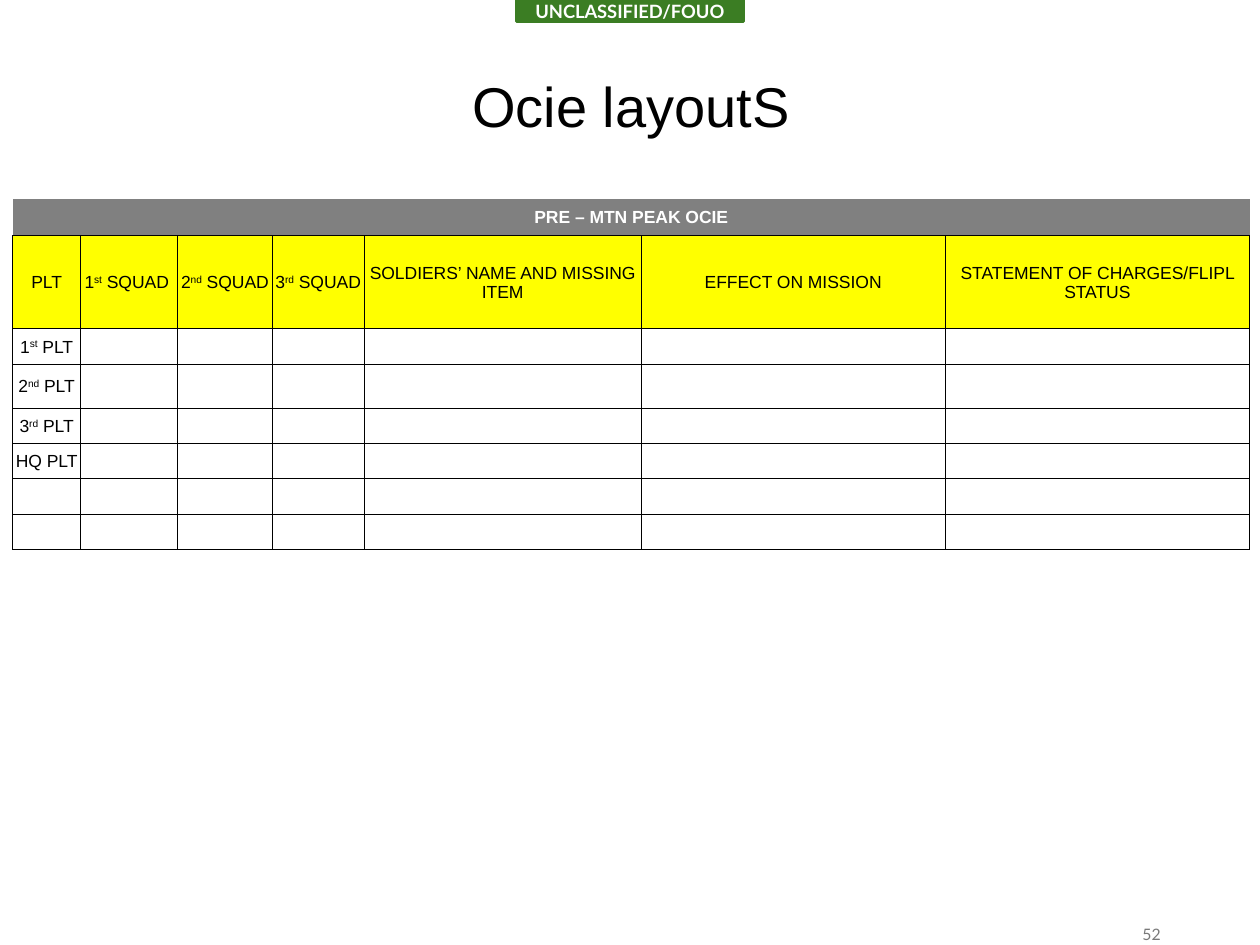
from dataclasses import dataclass

from lxml import etree
from pptx import Presentation
from pptx.dml.color import RGBColor
from pptx.enum.shapes import MSO_SHAPE
from pptx.enum.text import MSO_ANCHOR, PP_ALIGN
from pptx.oxml.ns import qn
from pptx.util import Inches, Pt

RECTANGLE = MSO_SHAPE.RECTANGLE
MIDDLE, BOTTOM = MSO_ANCHOR.MIDDLE, MSO_ANCHOR.BOTTOM
CENTER, RIGHT = PP_ALIGN.CENTER, PP_ALIGN.RIGHT


@dataclass(frozen=True)
class Theme:
    heading_font: str = "Arial"
    label_font: str = "Lato"
    black: str = "000000"
    white: str = "FFFFFF"
    green: str = "3B7D23"
    gray: str = "808080"
    number_gray: str = "797979"
    yellow: str = "FFFF00"
    title_size: float = 32
    marking_size: float = 10.5
    table_size: float = 10
    number_size: float = 9
    marking_line: float = 1.5
    border: float = 0.5


THEME = Theme()
COLUMN_WIDTHS = [0.54, 0.77, 0.75, 0.73, 2.2, 2.41, 2.42]
ROW_HEIGHTS = [0.29, 0.74, 0.28, 0.35, 0.28, 0.28, 0.28, 0.28]
TABLE_TITLE = "PRE – MTN PEAK OCIE"
COLUMN_HEADS = [
    "PLT", "1^st^ SQUAD ", "2^nd^ SQUAD", "3^rd^ SQUAD",
    "SOLDIERS’ NAME AND MISSING ITEM", "EFFECT ON MISSION",
    "STATEMENT OF CHARGES/FLIPL STATUS",
]
PLATOONS = ["1^st^ PLT", "2^nd^ PLT", "3^rd^ PLT", "HQ PLT", "", ""]


def write_text(frame, text, font, size, color, align, anchor, bold=False):
    frame.word_wrap = True
    frame.vertical_anchor = anchor
    frame.margin_left = frame.margin_right = Inches(0.1)
    frame.margin_top = frame.margin_bottom = 0
    paragraph = frame.paragraphs[0]
    paragraph.alignment = align
    add_run(paragraph, text, font, size, color, bold)
    return paragraph


def add_run(paragraph, text, font, size, color, bold=False):
    run = paragraph.add_run()
    run.text = text
    run.font.name = font
    run.font.size = Pt(size)
    run.font.bold = bold
    run.font.color.rgb = RGBColor.from_string(color)
    return run


def add_marking(slide):
    shape = slide.shapes.add_shape(
        RECTANGLE, Inches(4.1), 0, Inches(1.8), Inches(0.17))
    shape.shadow.inherit = False
    shape.fill.solid()
    shape.fill.fore_color.rgb = RGBColor.from_string(THEME.green)
    shape.line.color.rgb = RGBColor.from_string(THEME.green)
    shape.line.width = Pt(THEME.marking_line)
    write_text(shape.text_frame, "UNCLASSIFIED/FOUO", THEME.label_font,
               THEME.marking_size, THEME.white, CENTER, MIDDLE, True)


def add_title(slide):
    box = slide.shapes.add_textbox(
        Inches(0.76), Inches(0.33), Inches(8.5), Inches(0.83))
    paragraph = write_text(box.text_frame, "Ocie layoutS", THEME.heading_font,
                           THEME.title_size, THEME.black, CENTER, BOTTOM)
    box.text_frame.margin_bottom = Inches(0.05)
    paragraph.line_spacing = 0.9


def add_slide_number(slide):
    box = slide.shapes.add_textbox(
        Inches(7.06), Inches(7.34), Inches(2.25), Inches(0.15))
    write_text(box.text_frame, "52", THEME.label_font, THEME.number_size,
               THEME.number_gray, RIGHT, MIDDLE)


def set_borders(cell, visible_sides):
    properties = cell._tc.get_or_add_tcPr()
    for side in "LRTB":
        line = etree.SubElement(properties, qn(f"a:ln{side}"))
        if side in visible_sides:
            line.set("w", str(Pt(THEME.border)))
            fill = etree.SubElement(line, qn("a:solidFill"))
            etree.SubElement(fill, qn("a:srgbClr"), val=THEME.black)
        else:
            etree.SubElement(line, qn("a:noFill"))


def fill_cell(cell, text, background, color, bold=False, sides="LRTB"):
    set_borders(cell, sides)
    cell.fill.solid()
    cell.fill.fore_color.rgb = RGBColor.from_string(background)
    cell.vertical_anchor = MIDDLE
    cell.margin_left = cell.margin_right = cell.margin_top = Inches(0.01)
    cell.margin_bottom = 0
    paragraph = cell.text_frame.paragraphs[0]
    paragraph.alignment = CENTER
    if not text:
        etree.SubElement(paragraph._p, qn("a:endParaRPr"),
                         sz=str(int(THEME.table_size * 100)))
        return
    for index, part in enumerate(text.split("^")):
        run = add_run(paragraph, part, THEME.heading_font,
                      THEME.table_size, color, bold)
        if index % 2:
            run.font._element.set("baseline", "30000")


def add_layout_table(slide):
    frame = slide.shapes.add_table(
        len(ROW_HEIGHTS), len(COLUMN_WIDTHS), Inches(0.1), Inches(1.58),
        Inches(sum(COLUMN_WIDTHS)), Inches(sum(ROW_HEIGHTS)))
    table = frame.table
    table.first_row = table.horz_banding = False
    for column, width in zip(table.columns, COLUMN_WIDTHS):
        column.width = Inches(width)
    for row, height in zip(table.rows, ROW_HEIGHTS):
        row.height = Inches(height)

    last_column = len(COLUMN_WIDTHS) - 1
    table.cell(0, 0).merge(table.cell(0, last_column))
    fill_cell(table.cell(0, 0), TABLE_TITLE, THEME.gray, THEME.white, True, "B")
    for column, head in enumerate(COLUMN_HEADS):
        fill_cell(table.cell(1, column), head, THEME.yellow, THEME.black)
    for row, platoon in enumerate(PLATOONS, start=2):
        for column, text in enumerate([platoon] + [""] * last_column):
            fill_cell(table.cell(row, column), text, THEME.white, THEME.black)


def main():
    presentation = Presentation()
    presentation.slide_width = Inches(10)
    presentation.slide_height = Inches(7.5)
    slide = presentation.slides.add_slide(presentation.slide_layouts[6])
    add_marking(slide)
    add_title(slide)
    add_slide_number(slide)
    add_layout_table(slide)
    presentation.save("out.pptx")


if __name__ == "__main__":
    main()
